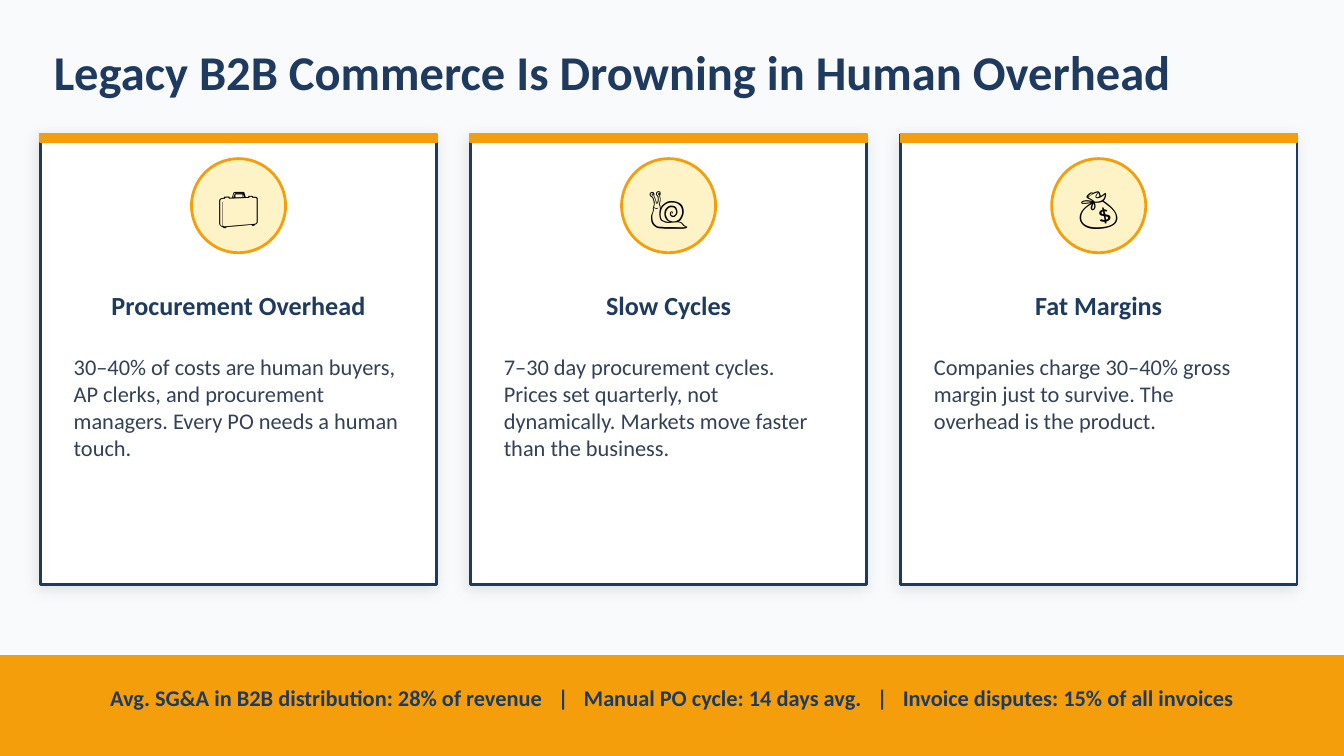
from lxml.etree import SubElement
from pptx import Presentation
from pptx.dml.color import RGBColor
from pptx.enum.shapes import MSO_SHAPE
from pptx.enum.text import MSO_ANCHOR, MSO_AUTO_SIZE, PP_ALIGN
from pptx.oxml.ns import qn
from pptx.util import Pt

NAVY, AMBER, CREAM = "1E3A5F", "F59E0B", "FEF3C7"
SLATE, WHITE, BLACK, MIST = "334155", "FFFFFF", "000000", "F8FAFC"

SLIDE_W, SLIDE_H = 720, 405
CARD_LEFT, CARD_TOP, CARD_W, CARD_H = 21.6, 72, 212.4, 241.2
CARD_PITCH = 230.4
CARD_PADDING = 10.8
BADGE = 50.4
BAND_TOP = 351.4

CARDS = [
    ("💼", "Procurement Overhead",
     "30–40% of costs are human buyers, AP clerks, and procurement managers. "
     "Every PO needs a human touch."),
    ("🐌", "Slow Cycles",
     "7–30 day procurement cycles. Prices set quarterly, not dynamically. "
     "Markets move faster than the business."),
    ("💰", "Fat Margins",
     "Companies charge 30–40% gross margin just to survive. "
     "The overhead is the product."),
]
METRICS = [
    "Avg. SG&A in B2B distribution: 28% of revenue",
    "Manual PO cycle: 14 days avg.",
    "Invoice disputes: 15% of all invoices",
]


def color(hex_code):
    return RGBColor.from_string(hex_code)


class SlideBuilder:
    font_name = "Calibri"

    def __init__(self, slide):
        self.slide = slide
        slide.background.fill.solid()
        slide.background.fill.fore_color.rgb = color(MIST)

    def style_text(self, frame, size, ink, bold=False, align=PP_ALIGN.LEFT,
                   anchor=MSO_ANCHOR.MIDDLE, inset=True):
        frame.word_wrap = True
        frame.auto_size = MSO_AUTO_SIZE.NONE
        frame.vertical_anchor = anchor
        if not inset:
            frame.margin_left = frame.margin_right = Pt(0)
            frame.margin_top = frame.margin_bottom = Pt(0)
        for paragraph in frame.paragraphs:
            paragraph.alignment = align
            for run in paragraph.runs:
                run.font.name = self.font_name
                run.font.size = Pt(size)
                run.font.bold = bold
                run.font.color.rgb = color(ink)

    def title(self, wording, left, top, width, height):
        heading = self.slide.shapes.title
        heading.left, heading.top = Pt(left), Pt(top)
        heading.width, heading.height = Pt(width), Pt(height)
        heading.text_frame.text = wording
        self.style_text(heading.text_frame, 26, NAVY, bold=True, inset=False)

    def text(self, wording, left, top, width, height, size, ink, **style):
        box = self.slide.shapes.add_textbox(Pt(left), Pt(top), Pt(width), Pt(height))
        box.text_frame.text = wording
        self.style_text(box.text_frame, size, ink, **style)

    def shape(self, preset, left, top, width, height, fill, line, line_width):
        shape = self.slide.shapes.add_shape(
            preset, Pt(left), Pt(top), Pt(width), Pt(height))
        shape.shadow.inherit = False
        shape.fill.solid()
        shape.fill.fore_color.rgb = color(fill)
        shape.line.color.rgb = color(line)
        shape.line.width = Pt(line_width)
        return shape

    def soft_shadow(self, shape):
        effects = shape.element.spPr.find(qn("a:effectLst"))
        shadow = SubElement(effects, qn("a:outerShdw"), blurRad=str(Pt(8)),
                            dist=str(Pt(2)), dir="8100000", algn="bl",
                            rotWithShape="0")
        tint = SubElement(shadow, qn("a:srgbClr"), val=BLACK)
        SubElement(tint, qn("a:alpha"), val="10000")

    def card(self, left, icon, heading, detail):
        panel = self.shape(MSO_SHAPE.RECTANGLE, left, CARD_TOP, CARD_W, CARD_H,
                           WHITE, NAVY, 1.5)
        self.soft_shadow(panel)
        self.shape(MSO_SHAPE.RECTANGLE, left, CARD_TOP, CARD_W, 4.3, AMBER, AMBER, 1)

        badge_area = (left + (CARD_W - BADGE) / 2, CARD_TOP + 13, BADGE, BADGE)
        self.shape(MSO_SHAPE.OVAL, *badge_area, CREAM, AMBER, 1.5)
        self.text(icon, *badge_area, 22, BLACK, align=PP_ALIGN.CENTER, inset=False)

        text_left, text_width = left + CARD_PADDING, CARD_W - 2 * CARD_PADDING
        self.text(heading, text_left, 145.4, text_width, 36, 14, NAVY,
                  bold=True, align=PP_ALIGN.CENTER)
        self.text(detail, text_left, 185.8, text_width, 111.6, 12, SLATE,
                  anchor=MSO_ANCHOR.TOP)

    def metrics_band(self, metrics):
        """Draw the bottom band, with widened spaces around each divider."""
        self.shape(MSO_SHAPE.RECTANGLE, 0, BAND_TOP, SLIDE_W, SLIDE_H - BAND_TOP,
                   AMBER, AMBER, 1)
        box = self.slide.shapes.add_textbox(Pt(21.6), Pt(352.8), Pt(676.8), Pt(41.8))
        paragraph = box.text_frame.paragraphs[0]
        pieces = [metrics[0]]
        for metric in metrics[1:]:
            pieces += [" ", "|", " ", metric]
        for piece in pieces:
            run = paragraph.add_run()
            run.text = piece
            if piece == " ":
                run.font._element.set("spc", "540")
        self.style_text(box.text_frame, 12, NAVY, bold=True,
                        align=PP_ALIGN.CENTER, inset=False)


def main():
    deck = Presentation()
    deck.slide_width, deck.slide_height = Pt(SLIDE_W), Pt(SLIDE_H)
    builder = SlideBuilder(deck.slides.add_slide(deck.slide_layouts[5]))

    builder.title("Legacy B2B Commerce Is Drowning in Human Overhead",
                  28.8, 15.8, 662.4, 44.6)
    for index, (icon, heading, detail) in enumerate(CARDS):
        builder.card(CARD_LEFT + index * CARD_PITCH, icon, heading, detail)
    builder.metrics_band(METRICS)
    deck.save("out.pptx")


if __name__ == "__main__":
    main()
